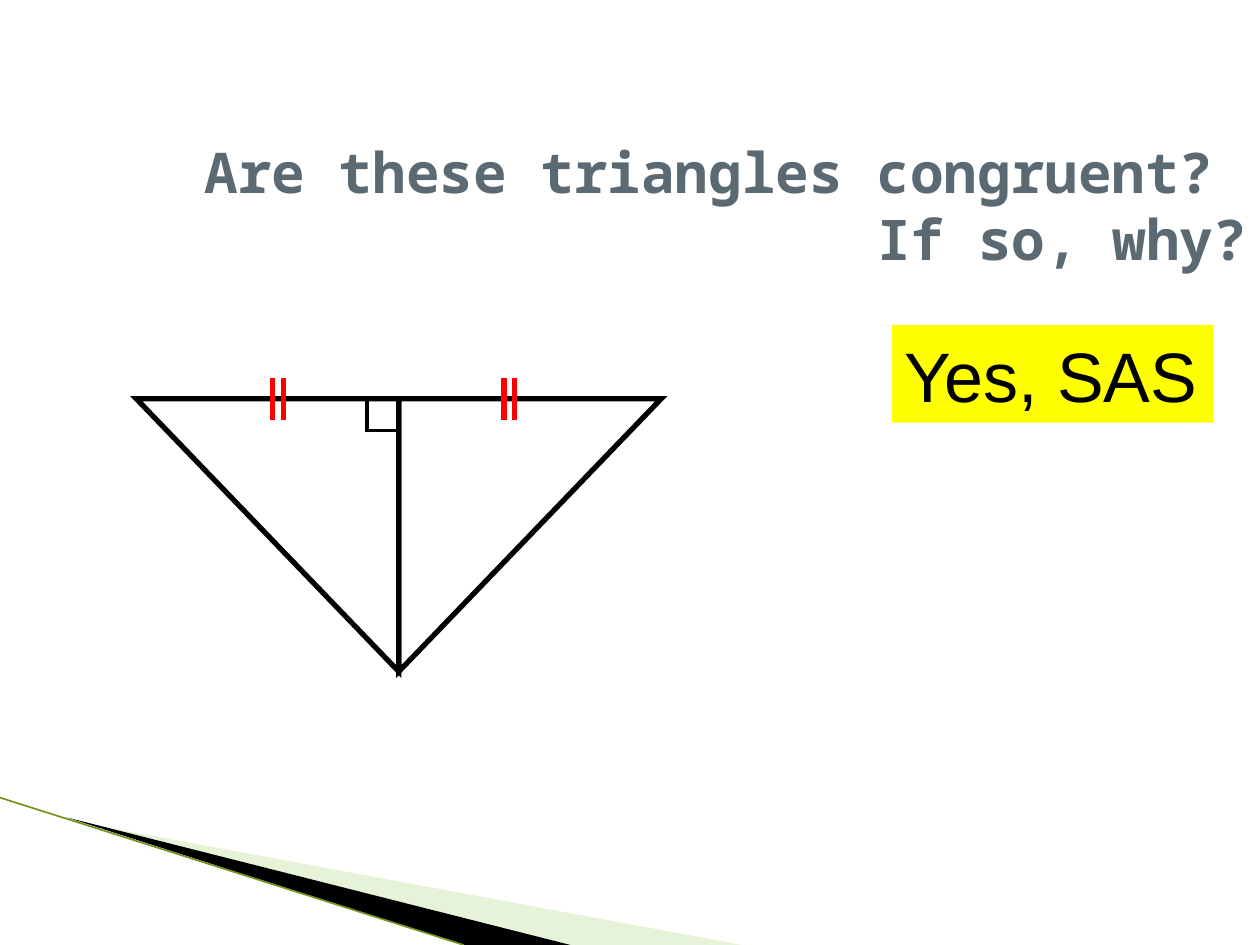
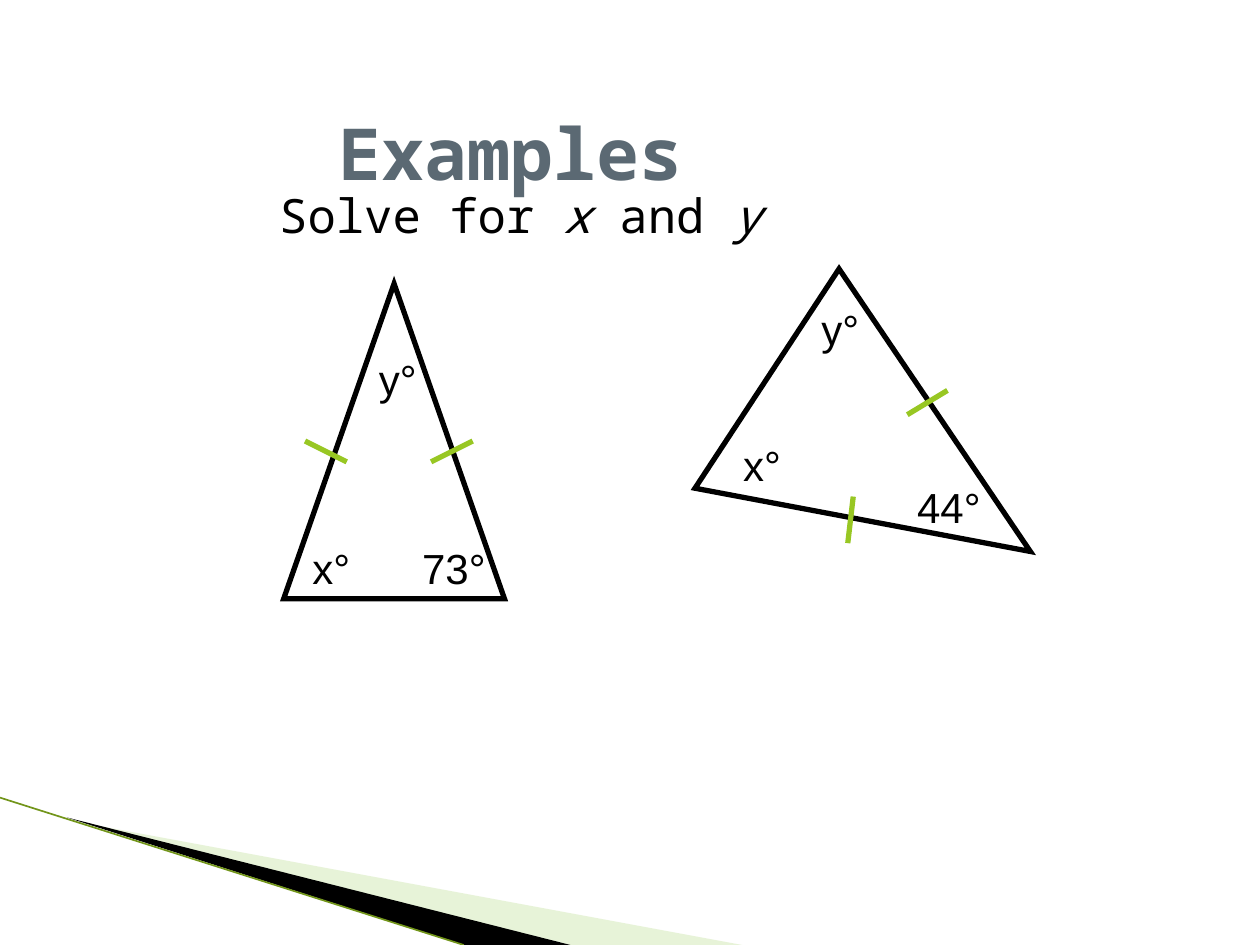
from dataclasses import dataclass

import lxml.etree
import pptx
import pptx.dml.color
import pptx.enum.shapes
import pptx.enum.text
import pptx.oxml.ns
import pptx.util

Cm = pptx.util.Cm
Kind = pptx.enum.shapes.MSO_SHAPE
Align = pptx.enum.text.PP_ALIGN
Anchor = pptx.enum.text.MSO_ANCHOR
Point = tuple[float, float]


@dataclass(frozen=True)
class Theme:
    ink: str = "000000"
    title: str = "5B6973"
    answer: str = "FFFF00"
    red_tick: str = "FF0000"
    green_tick: str = "98C723"
    pale_band: str = "C5E19F"
    band_edge: str = "72951A"
    mono: str = "Noto Sans Mono"
    sans: str = "Arial"
    question_size: float = 32
    heading_size: float = 41
    prompt_size: float = 27
    answer_size: float = 40
    label_size: float = 24
    stroke: float = 3
    thin_stroke: float = 2.25
    edge_stroke: float = 0.95


THEME = Theme()


@dataclass(frozen=True)
class Box:
    """Place and size in centimetres."""
    left: float
    top: float
    width: float
    height: float

    def lengths(self) -> tuple:
        return Cm(self.left), Cm(self.top), Cm(self.width), Cm(self.height)


@dataclass(frozen=True)
class Outline:
    kind: Kind
    box: Box
    stroke: float = THEME.stroke
    rotation: float = 0
    flips: tuple[str, ...] = ()


@dataclass(frozen=True)
class Tick:
    start: Point
    end: Point


@dataclass(frozen=True)
class AngleLabel:
    text: str
    left: float
    top: float


@dataclass(frozen=True)
class Band:
    points: tuple[Point, ...]
    color: str
    alpha: int = 100


SLIDE_WIDTH, SLIDE_HEIGHT = 25.4, 19.05

# Corner decoration shared by the slides
BANDS = (
    Band(((1.4, 16.54), (14.96, SLIDE_HEIGHT), (11.5, SLIDE_HEIGHT)), THEME.pale_band, 40),
    Band(((1.35, 16.48), (11.5, SLIDE_HEIGHT), (9.35, SLIDE_HEIGHT)), THEME.ink),
)
BAND_EDGE = Tick((0, 16.08), (9.35, SLIDE_HEIGHT))

# Two right triangles that share a vertical leg
LEG_X, BASE_Y, HALF_BASE, LEG = 8.04, 8.04, 5.29, 5.5
CORNER = 0.64
CONGRUENT_OUTLINES = (
    Outline(Kind.RIGHT_TRIANGLE, Box(LEG_X - HALF_BASE, BASE_Y, HALF_BASE, LEG),
            flips=("flipH", "flipV")),
    Outline(Kind.RIGHT_TRIANGLE, Box(LEG_X, BASE_Y, HALF_BASE, LEG), flips=("flipV",)),
    Outline(Kind.RECTANGLE, Box(LEG_X - CORNER, BASE_Y, CORNER, CORNER), THEME.thin_stroke),
)
CONGRUENT_TICKS = tuple(
    Tick((x + shift, 7.62), (x + shift, 8.47)) for x in (5.5, 10.16) for shift in (0, 0.21)
)

# Two isosceles triangles with unknown angles
ISOSCELES_OUTLINES = (
    Outline(Kind.ISOSCELES_TRIANGLE, Box(5.72, 5.72, 4.45, 6.35)),
    Outline(Kind.ISOSCELES_TRIANGLE, Box(15.47, 6.2, 5.29, 6.35), rotation=123.3),
)
ISOSCELES_TICKS = (
    Tick((6.15, 8.89), (6.99, 9.31)),
    Tick((8.69, 9.31), (9.53, 8.89)),
    Tick((19.1, 7.87), (18.29, 8.36)),
    Tick((17.2, 10.01), (17.09, 10.95)),
)
ANGLE_LABELS = (
    AngleLabel("73°", 8.26, 10.8),
    AngleLabel("x°", 6.05, 10.8),
    AngleLabel("y°", 7.39, 6.99),
    AngleLabel("y°", 16.31, 5.99),
    AngleLabel("x°", 14.73, 8.74),
    AngleLabel("44°", 18.24, 9.58),
)


def rgb(color: str) -> pptx.dml.color.RGBColor:
    return pptx.dml.color.RGBColor.from_string(color)


def add_element(parent, tag: str, **attributes: str) -> None:
    element = lxml.etree.SubElement(parent, pptx.oxml.ns.qn(tag))
    for name, value in attributes.items():
        element.set(name, value)


def write_text(shape, text: str, *, size: float, font: str = THEME.mono,
               color: str = THEME.ink, bold: bool = False, align: Align = Align.LEFT,
               anchor: Anchor = Anchor.TOP, italics: str = "") -> None:
    """Write one paragraph; words listed in italics are slanted."""
    frame = shape.text_frame
    frame.auto_size = pptx.enum.text.MSO_AUTO_SIZE.NONE
    frame.word_wrap = True
    frame.vertical_anchor = anchor
    paragraph = frame.paragraphs[0]
    paragraph.alignment = align
    slanted = italics.split()
    pieces = [text]
    for word in slanted:
        before, after = pieces.pop().split(word, 1)
        pieces += [before, word, after]
    for piece in filter(None, pieces):
        run = paragraph.add_run()
        run.text = piece
        run.font.name = font
        run.font.size = pptx.util.Pt(size)
        run.font.bold = bold
        run.font.italic = piece in slanted
        run.font.color.rgb = rgb(color)


def add_tick(slide, tick: Tick, color: str, stroke: float = THEME.stroke) -> None:
    ends = [Cm(value) for value in (*tick.start, *tick.end)]
    connector = slide.shapes.add_connector(pptx.enum.shapes.MSO_CONNECTOR.STRAIGHT, *ends)
    connector.line.color.rgb = rgb(color)
    connector.line.width = pptx.util.Pt(stroke)
    add_element(connector.element.spPr, "a:effectLst")


def add_outline(slide, outline: Outline) -> None:
    shape = slide.shapes.add_shape(outline.kind, *outline.box.lengths())
    shape.rotation = outline.rotation
    for flip in outline.flips:
        shape.element.spPr.get_or_add_xfrm().set(flip, "1")
    shape.shadow.inherit = False
    shape.fill.background()
    shape.line.color.rgb = rgb(THEME.ink)
    shape.line.width = pptx.util.Pt(outline.stroke)
    add_element(shape.element.spPr.find(pptx.oxml.ns.qn("a:ln")), "a:miter", lim="800000")


def add_band(slide, band: Band) -> None:
    start, *others = [(Cm(x), Cm(y)) for x, y in band.points]
    builder = slide.shapes.build_freeform(*start)
    builder.add_line_segments(others, close=True)
    shape = builder.convert_to_shape()
    shape.shadow.inherit = False
    shape.fill.solid()
    shape.fill.fore_color.rgb = rgb(band.color)
    shape.line.fill.background()
    if band.alpha < 100:
        color = shape.element.spPr.find(".//" + pptx.oxml.ns.qn("a:srgbClr"))
        add_element(color, "a:alpha", val=str(band.alpha * 1000))


def add_slide(presentation, title: str, box: Box, size: float, align: Align = Align.LEFT):
    """Add a title-only slide with the corner decoration."""
    slide = presentation.slides.add_slide(presentation.slide_layouts[5])
    for band in BANDS:
        add_band(slide, band)
    add_tick(slide, BAND_EDGE, THEME.band_edge, THEME.edge_stroke)
    placeholder = slide.shapes.title
    placeholder.left, placeholder.top, placeholder.width, placeholder.height = box.lengths()
    write_text(placeholder, title, size=size, color=THEME.title, bold=True,
               align=align, anchor=Anchor.MIDDLE)
    return slide


def add_figure(slide, outlines: tuple[Outline, ...], ticks: tuple[Tick, ...],
               tick_color: str) -> None:
    for outline in outlines:
        add_outline(slide, outline)
    for tick in ticks:
        add_tick(slide, tick, tick_color)


def build_congruence_slide(presentation) -> None:
    slide = add_slide(presentation, "Are these triangles congruent?  If so, why?",
                      Box(2.12, 2.54, 23.28, 3.18), THEME.question_size, Align.RIGHT)
    add_figure(slide, CONGRUENT_OUTLINES, CONGRUENT_TICKS, THEME.red_tick)
    answer = slide.shapes.add_shape(Kind.RECTANGLE, *Box(17.98, 6.55, 6.48, 1.97).lengths())
    answer.shadow.inherit = False
    answer.fill.solid()
    answer.fill.fore_color.rgb = rgb(THEME.answer)
    answer.line.fill.background()
    write_text(answer, "Yes, SAS", size=THEME.answer_size, font=THEME.sans,
               anchor=Anchor.BOTTOM)


def build_examples_slide(presentation) -> None:
    slide = add_slide(presentation, "Examples", Box(6.56, 1.48, 18.2, 3.18),
                      THEME.heading_size)
    prompt = slide.shapes.add_textbox(*Box(5.38, 3.63, 12.4, 2.11).lengths())
    write_text(prompt, "Solve for x and y", size=THEME.prompt_size, italics="x y")
    add_figure(slide, ISOSCELES_OUTLINES, ISOSCELES_TICKS, THEME.green_tick)
    for label in ANGLE_LABELS:
        width = 2.31 if len(label.text) > 2 else 1.8
        box = slide.shapes.add_textbox(*Box(label.left, label.top, width, 1.27).lengths())
        write_text(box, label.text, size=THEME.label_size, font=THEME.sans,
                   anchor=Anchor.BOTTOM)


def main() -> None:
    presentation = pptx.Presentation()
    presentation.slide_width = Cm(SLIDE_WIDTH)
    presentation.slide_height = Cm(SLIDE_HEIGHT)
    build_congruence_slide(presentation)
    build_examples_slide(presentation)
    presentation.save("out.pptx")


if __name__ == "__main__":
    main()
